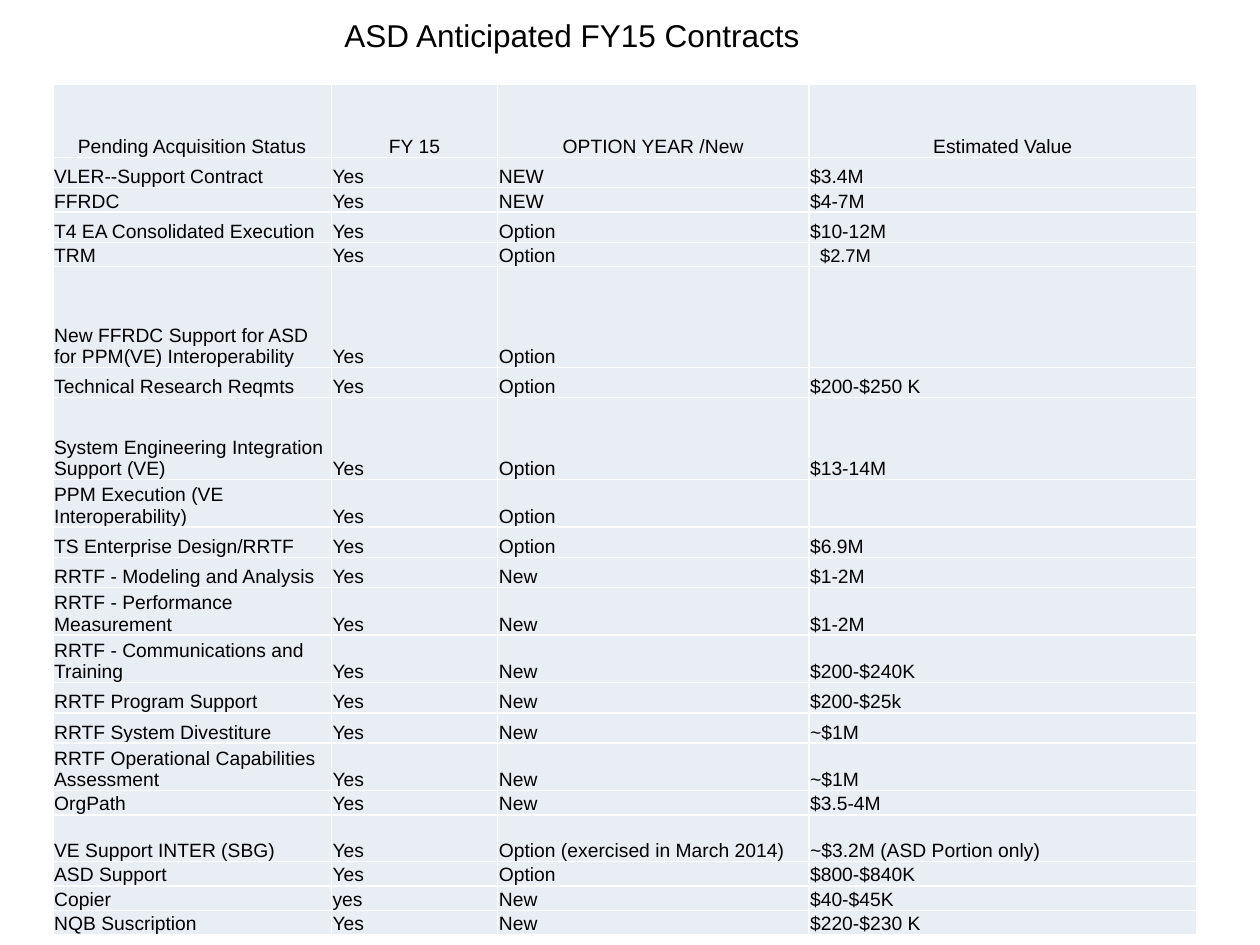
from dataclasses import dataclass

from lxml import etree
from pptx import Presentation
from pptx import util as u
from pptx.dml import color as c
from pptx.enum import text as t
from pptx.oxml import ns


@dataclass(frozen=True)
class Theme:
    font: str = "Arial"
    ink: str = "000000"
    pane: str = "E9EDF4"
    rule: str = "FFFFFF"
    head: float = 18
    body: float = 11
    small: float = 10.5
    line: float = 1


THEME = Theme()
COLS = [2.21, 1.32, 2.47, 3.08]
HEADS = ["Pending Acquisition Status", "FY 15", "OPTION YEAR /New", "Estimated Value"]
ROWS = [
    (0.24, "VLER--Support Contract", "Yes", "NEW", "$3.4M"),
    (0.12, "FFRDC", "Yes", "NEW", "$4-7M"),
    (0.24, "T4 EA Consolidated Execution", "Yes", "Option", "$10-12M"),
    (0.12, "TRM", "Yes", "Option", "$2.7M"),
    (0.8, "New FFRDC Support for ASD for PPM(VE) Interoperability", "Yes", "Option", ""),
    (0.24, "Technical Research Reqmts", "Yes", "Option", "$200-$250 K"),
    (0.65, "System Engineering Integration Support (VE)", "Yes", "Option", "$13-14M"),
    (0.24, "PPM Execution (VE Interoperability)", "Yes", "Option", ""),
    (0.24, "TS Enterprise Design/RRTF", "Yes", "Option", "$6.9M"),
    (0.24, "RRTF - Modeling and Analysis", "Yes", "New", "$1-2M"),
    (0.24, "RRTF - Performance Measurement", "Yes", "New", "$1-2M"),
    (0.37, "RRTF - Communications and Training", "Yes", "New", "$200-$240K"),
    (0.24, "RRTF Program Support", "Yes", "New", "$200-$25k"),
    (0.24, "RRTF System Divestiture", "Yes", "New", "~$1M"),
    (0.37, "RRTF Operational Capabilities Assessment", "Yes", "New", "~$1M"),
    (0.12, "OrgPath", "Yes", "New", "$3.5-4M"),
    (0.37, "VE Support INTER (SBG)", "Yes", "Option (exercised in March 2014)",
     "~$3.2M (ASD Portion only)"),
    (0.12, "ASD Support", "Yes", "Option", "$800-$840K"),
    (0.12, "Copier", "yes", "New", "$40-$45K"),
    (0.12, "NQB Suscription", "Yes", "New", "$220-$230 K"),
]


def apply(item, form):
    for key, value in form.items():
        setattr(item, key, value)


def write(frame, words, size, align):
    para = frame.paragraphs[0]
    para.alignment = align
    run = para.add_run()
    run.text = words
    apply(run.font, {"name": THEME.font, "size": u.Pt(size), "bold": False})
    run.font.color.rgb = c.RGBColor.from_string(THEME.ink)


def edge(cell):
    props = cell._tc.get_or_add_tcPr()
    for spot, side in enumerate("LRTB"):
        line = etree.Element(ns.qn("a:ln" + side), w=str(u.Pt(THEME.line)))
        fill = etree.SubElement(line, ns.qn("a:solidFill"))
        etree.SubElement(fill, ns.qn("a:srgbClr"), val=THEME.rule)
        props.insert(spot, line)


def style(cell):
    apply(cell, {
        "margin_left": u.Inches(0.01),
        "margin_right": u.Inches(0.01),
        "margin_top": u.Inches(0.01),
        "margin_bottom": 0,
        "vertical_anchor": t.MSO_ANCHOR.BOTTOM,
    })
    cell.fill.solid()
    cell.fill.fore_color.rgb = c.RGBColor.from_string(THEME.pane)
    edge(cell)


def add_title(slide, box):
    title = slide.shapes.title
    apply(title, dict(zip(("left", "top", "width", "height"), box)))
    apply(title.text_frame, {
        "word_wrap": True,
        "vertical_anchor": t.MSO_ANCHOR.TOP,
        "auto_size": t.MSO_AUTO_SIZE.SHAPE_TO_FIT_TEXT,
    })
    write(title.text_frame, "ASD Anticipated FY15 Contracts", THEME.head, t.PP_ALIGN.CENTER)


def add_grid(slide, box):
    rows = [(0.58, *HEADS), *ROWS]
    grid = slide.shapes.add_table(len(rows), len(COLS), *box).table
    apply(grid, {"first_row": False, "horz_banding": False})
    for col, width in zip(grid.columns, COLS):
        col.width = u.Inches(width)
    for i, (high, *words) in enumerate(rows):
        grid.rows[i].height = u.Inches(high)
        align = t.PP_ALIGN.LEFT if i else t.PP_ALIGN.CENTER
        for j, word in enumerate(words):
            cell = grid.cell(i, j)
            style(cell)
            inset = word == "$2.7M"
            if inset:
                cell.margin_left = u.Inches(0.09)
            if word:
                write(cell.text_frame, word, THEME.small if inset else THEME.body, align)


def main():
    deck = Presentation()
    apply(deck, {"slide_width": u.Inches(10), "slide_height": u.Inches(7.5)})
    slide = deck.slides.add_slide(deck.slide_layouts[5])
    add_grid(slide, [u.Inches(n) for n in (0.42, 0.67, 9.08, 6.6)])
    add_title(slide, [u.Inches(n) for n in (1.25, 0.08, 6.58, 0.4)])
    deck.save("out.pptx")


if __name__ == "__main__":
    main()
